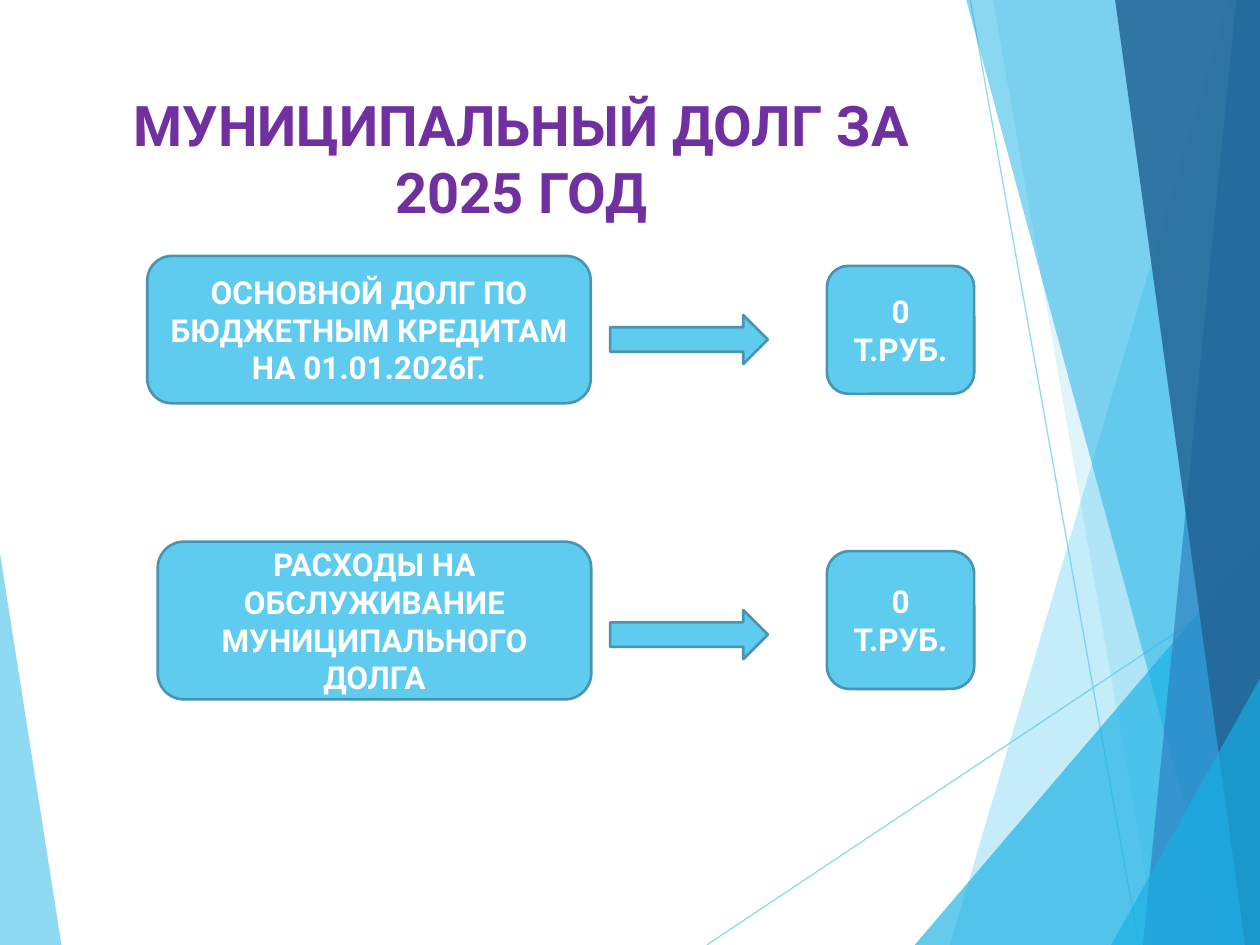
from pptx import Presentation
from pptx.dml.color import RGBColor as Rgb
from pptx.enum.shapes import MSO_CONNECTOR as Link, MSO_SHAPE as Kind
from pptx.enum.text import MSO_ANCHOR as Anchor, PP_ALIGN as Align
from pptx.oxml.ns import qn
from pptx.util import Cm, Pt
from lxml.etree import SubElement as Sub

HUES = {"sky": "5FCBEF", "edge": "4696B1", "cyan": "17B0E4", "blue": "2E83C3",
        "navy": "226292", "title": "7030A0", "white": "FFFFFF"}
WIDE, HIGH = 25.4, 19.05

deck = Presentation()
deck.slide_width, deck.slide_height = Cm(WIDE), Cm(HIGH)
slide = deck.slides.add_slide(deck.slide_layouts[6])
shapes = slide.shapes


def paint(fill, hue, alpha=100):
    fill.solid()
    fill.fore_color.rgb = Rgb.from_string(HUES[hue])
    if alpha < 100:
        color = fill._xPr.find(qn("a:solidFill"))[0]
        Sub(color, qn("a:alpha")).set("val", str(alpha * 1000))


def write(frame, lines, size, hue):
    frame.word_wrap = True
    for i, line in enumerate(lines):
        para = frame.paragraphs[0] if i == 0 else frame.add_paragraph()
        para.alignment = Align.CENTER
        run = para.add_run()
        run.text = line
        font = run.font
        font.name, font.size, font.bold = "Roboto", Pt(size), True
        font.color.rgb = Rgb.from_string(HUES[hue])


# Facets: top x, top y, bottom x, side x, hue, opacity
facets = [
    (0, 11.15, 1.24, 0, "sky", 70),
    (24.77, 0, 19.15, WIDE, "sky", 36),
    (20.02, 0, 23.34, WIDE, "sky", 20),
    (WIDE, 10.9, 18.44, WIDE, "cyan", 66),
    (19.48, 0, 24.64, WIDE, "cyan", 50),
    (24.92, 0, 23.04, WIDE, "blue", 70),
    (22.48, 0, 25.1, WIDE, "navy", 82),
    (WIDE, 13.68, 22.4, WIDE, "cyan", 66),
]
for top_x, top_y, low_x, side, hue, alpha in facets:
    path = shapes.build_freeform(Cm(top_x), Cm(top_y))
    path.add_line_segments([(Cm(low_x), Cm(HIGH)), (Cm(side), Cm(HIGH)),
                            (Cm(side), Cm(top_y))])
    facet = path.convert_to_shape()
    facet.shadow.inherit = False
    facet.line.fill.background()
    paint(facet.fill, hue, alpha)

    # Thin lines lie just above the left facet
    if side == 0:
        for ends in [(14.25, HIGH, WIDE, 11.62), (19.56, 0, 22.96, HIGH)]:
            line = shapes.add_connector(Link.STRAIGHT, *map(Cm, ends))
            line.line.width = Pt(0.75)
            paint(line.line.fill, "sky", 70)
            Sub(line._element.spPr, qn("a:effectLst"))

# Title
title = shapes.add_textbox(Cm(1.7), Cm(1.7), Cm(17.63), Cm(3.66))
write(title.text_frame, ["МУНИЦИПАЛЬНЫЙ ДОЛГ ЗА 2025 ГОД"], 32, "title")

# Debt rows: label, arrow, sum
box, arrow = Kind.ROUNDED_RECTANGLE, Kind.RIGHT_ARROW
parts = [
    (box, 2.97, 5.16, 8.94, 2.97,
     ["ОСНОВНОЙ ДОЛГ ПО БЮДЖЕТНЫМ КРЕДИТАМ НА 01.01.2026Г."]),
    (box, 3.18, 10.92, 8.74, 3.18,
     ["РАСХОДЫ НА ОБСЛУЖИВАНИЕ МУНИЦИПАЛЬНОГО ДОЛГА"]),
    (arrow, 12.3, 6.35, 3.18, 0.99, []),
    (arrow, 12.3, 12.3, 3.18, 0.99, []),
    (box, 16.67, 5.36, 2.97, 2.58, ["0 Т.РУБ."]),
    (box, 16.67, 11.11, 2.97, 2.78, ["0", "Т.РУБ."]),
]
for kind, *place, lines in parts:
    part = shapes.add_shape(kind, *map(Cm, place))
    part.shadow.inherit = False
    paint(part.fill, "sky")
    paint(part.line.fill, "edge")
    part.line.width = Pt(1.5)
    part.text_frame.vertical_anchor = Anchor.MIDDLE
    write(part.text_frame, lines, 18, "white")

deck.save("out.pptx")
